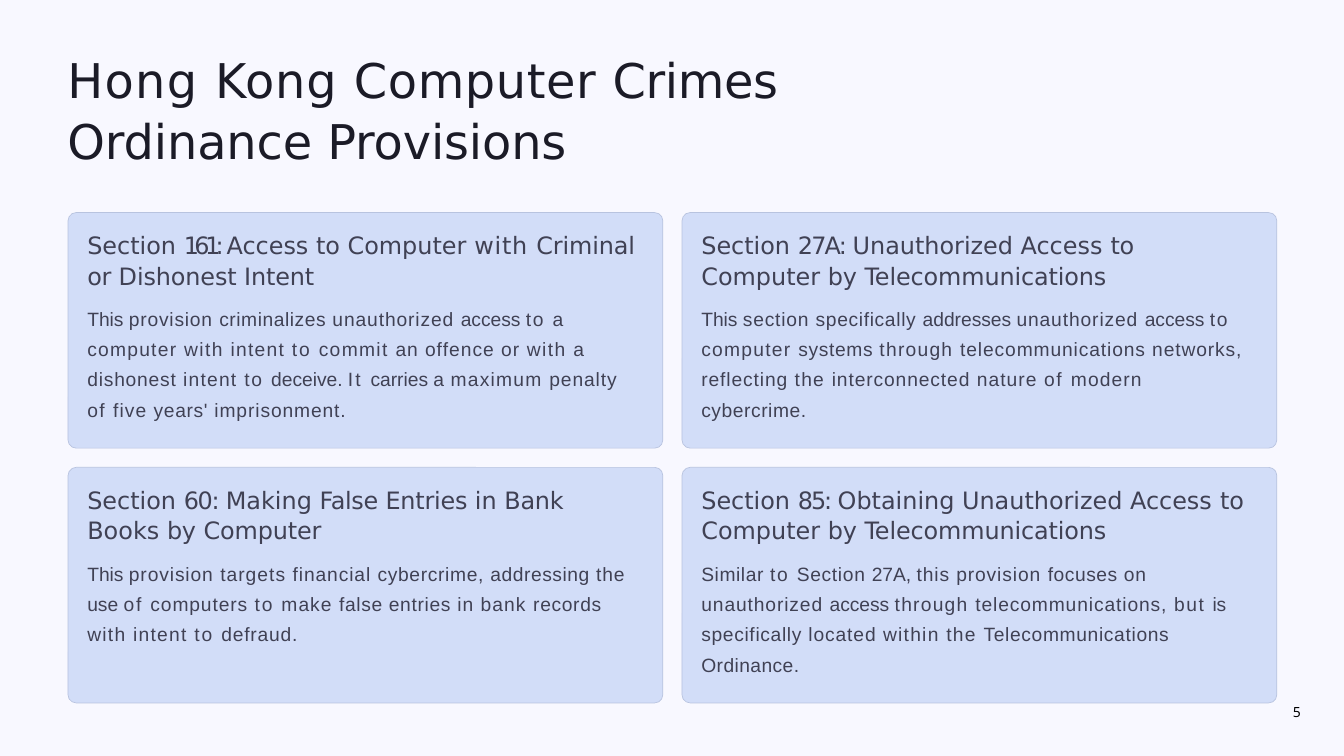
from pptx import Presentation
from pptx.dml.color import RGBColor
from pptx.enum.shapes import MSO_SHAPE
from pptx.util import Pt

ROUNDED_RECTANGLE = MSO_SHAPE.ROUNDED_RECTANGLE
BACKGROUND = RGBColor(0xF8, 0xF8, 0xFF)
TITLE_INK = RGBColor(0x1B, 0x1B, 0x27)
CARD_INK = RGBColor(0x40, 0x41, 0x54)
BLACK = RGBColor(0, 0, 0)
CARD_FILL = RGBColor(0xD2, 0xDD, 0xF8)
CARD_LINE = RGBColor(0xB8, 0xC3, 0xDF)

CARD_LEFT, CARD_TOP = 58.3, 182.2
CARD_WIDTH, CARD_HEIGHT = 509.8, 201.9
COLUMN_STEP, ROW_STEP = 526.3, 218.4
PADDING_LEFT, PADDING_TOP, TEXT_WIDTH = 16.6, 13.7, 474
CORNER_RADIUS = 7
COLUMNS = 2

TITLE_FORMAT = {
    "font": {"name": "DejaVu Sans", "size": Pt(41)},
    "paragraph": {"line_spacing": 1.06, "space_before": Pt(1)},
    "color": TITLE_INK,
}
HEADING_FORMAT = {
    "font": {"name": "DejaVu Sans", "size": Pt(20.5)},
    "paragraph": {"line_spacing": 1.05, "space_before": Pt(0.9)},
    "color": CARD_INK,
}
BODY_FORMAT = {
    "font": {"name": "Arial", "size": Pt(16.5)},
    "paragraph": {"line_spacing": 1.31, "space_before": Pt(8.8)},
    "color": CARD_INK,
}
NUMBER_FORMAT = {
    "font": {"name": "Noto Sans", "size": Pt(12)},
    "paragraph": {"space_before": Pt(1.8)},
    "color": BLACK,
}

TITLE = [("Hong ", 1.1), ("Kong ", 0.8), ("Computer ", 0.5), ("Crimes ", -0.3),
         ("Ordinance Provisions", -0.1)]
PAGE_NUMBER = [("5", -0.2)]

PROVISIONS = [
    (
        [("Section ", 0), ("161: ", -4), ("Access to Computer ", 0), ("with ", 0.6),
         ("Criminal ", -0.1), ("or ", -0.3), ("Dishonest Intent", -0.1)],
        [("This ", 0), ("provision ", 0.7), ("criminalizes ", 0.5),
         ("unauthorized ", 0.8), ("access ", 0), ("to ", 1.6), ("a ", 0),
         ("computer ", 1.1), ("with ", 1.2), ("intent ", 1.1), ("to ", 1.6),
         ("commit ", 1.2), ("an ", 0.8), ("offence or ", 0.9), ("with ", 1.2),
         ("a ", 0), ("dishonest ", 0.7), ("intent ", 1.1), ("to ", 1.6),
         ("deceive. ", 0), ("It ", 1.9), ("carries ", 0), ("a ", 0.5),
         ("maximum ", 1.1), ("penalty ", 0.8), ("of ", 1.3), ("five ", 0.9),
         ("years' ", 0.6), ("imprisonment.", 0.8)],
    ),
    (
        [("Section ", 0), ("27A: ", -1.6), ("Unauthorized Access ", 0),
         ("to ", -0.2), ("Computer ", 0), ("by ", -0.2),
         ("Telecommunications", -0.1)],
        [("This ", 0), ("section ", 0.7), ("specifically ", 0.6), ("addresses ", 0),
         ("unauthorized ", 0.8), ("access ", 0), ("to ", 1.4), ("computer ", 1.1),
         ("systems ", 0.6), ("through ", 1.1),
         ("telecommunications networks, reflecting ", 0.8), ("the ", 1.1),
         ("interconnected ", 0.8), ("nature ", 0.9), ("of ", 1.6), ("modern ", 1),
         ("cybercrime.", 0.5)],
    ),
    (
        [("Section ", 0), ("60: ", -1.2), ("Making ", 0), ("False ", -0.3),
         ("Entries ", -0.2), ("in ", 0), ("Bank ", -0.2), ("Books ", 0),
         ("by ", -0.2), ("Computer", -0.1)],
        [("This ", 0), ("provision ", 0.8), ("targets ", 0.9), ("financial ", 0.8),
         ("cybercrime, ", 0.6), ("addressing ", 0.5), ("the ", 0.8), ("use ", 0),
         ("of ", 1.6), ("computers ", 0.8), ("to ", 1.6), ("make ", 0.9),
         ("false entries ", 0.6), ("in ", 0.8), ("bank ", 1), ("records ", 0.6),
         ("with intent ", 1.1), ("to ", 1.6), ("defraud.", 0.7)],
    ),
    (
        [("Section ", 0), ("85: ", -1.8), ("Obtaining Unauthorized Access ", 0),
         ("to ", -0.2), ("Computer ", 0), ("by ", -0.2),
         ("Telecommunications", -0.1)],
        [("Similar ", 0.5), ("to ", 1.6), ("Section ", 0.6), ("27A, ", 0),
         ("this provision ", 0.8), ("focuses ", 0.5), ("on unauthorized ", 0.8),
         ("access ", 0), ("through ", 1.1), ("telecommunications, ", 0.8),
         ("but ", 1.4), ("is ", -0.2), ("specifically ", 0.6), ("located ", 0.8),
         ("within the ", 1.1), ("Telecommunications ", 0.6), ("Ordinance.", 0.4)],
    ),
]


def set_attributes(target, values):
    """Set each named attribute of the target."""
    for name, value in values.items():
        setattr(target, name, value)


def fill_paragraph(paragraph, runs, text_format):
    """Write runs of text, each with its own letter spacing in points."""
    set_attributes(paragraph, text_format["paragraph"])
    for text, spacing in runs:
        run = paragraph.add_run()
        run.text = text
        set_attributes(run.font, text_format["font"])
        run.font.color.rgb = text_format["color"]
        run.font._element.set("spc", str(round(spacing * 100)))


def add_text(slide, left, top, width, height, paragraphs, top_margin=0.9):
    """Add a wrapping text box with one paragraph per (runs, format) pair."""
    shape = slide.shapes.add_textbox(Pt(left), Pt(top), Pt(width), Pt(height))
    frame = shape.text_frame
    set_attributes(frame, {
        "word_wrap": True, "margin_left": 0, "margin_right": 0,
        "margin_top": Pt(top_margin), "margin_bottom": 0,
    })
    for index, (runs, text_format) in enumerate(paragraphs):
        paragraph = frame.add_paragraph() if index else frame.paragraphs[0]
        fill_paragraph(paragraph, runs, text_format)


def add_card(slide, left, top, heading, body):
    """Add a rounded panel with a heading and a description."""
    shape = slide.shapes.add_shape(
        ROUNDED_RECTANGLE, Pt(left), Pt(top), Pt(CARD_WIDTH), Pt(CARD_HEIGHT))
    shape.adjustments[0] = CORNER_RADIUS / CARD_HEIGHT
    shape.shadow.inherit = False
    shape.fill.solid()
    shape.fill.fore_color.rgb = CARD_FILL
    shape.line.color.rgb = CARD_LINE
    shape.line.width = Pt(0.6)
    add_text(slide, left + PADDING_LEFT, top + PADDING_TOP, TEXT_WIDTH, 167,
             [(heading, HEADING_FORMAT), (body, BODY_FORMAT)])


def main():
    """Build the slide of ordinance provisions."""
    presentation = Presentation()
    presentation.slide_width, presentation.slide_height = Pt(1152), Pt(648)
    slide = presentation.slides.add_slide(presentation.slide_layouts[6])
    slide.background.fill.solid()
    slide.background.fill.fore_color.rgb = BACKGROUND
    add_text(slide, 57.8, 39.6, 831, 105.8, [(TITLE, TITLE_FORMAT)])
    for index, (heading, body) in enumerate(PROVISIONS):
        row, column = divmod(index, COLUMNS)
        add_card(slide, CARD_LEFT + column * COLUMN_STEP,
                 CARD_TOP + row * ROW_STEP, heading, body)
    add_text(slide, 1108.2, 600.5, 17, 18, [(PAGE_NUMBER, NUMBER_FORMAT)], 2.2)
    presentation.save("out.pptx")


if __name__ == "__main__":
    main()
